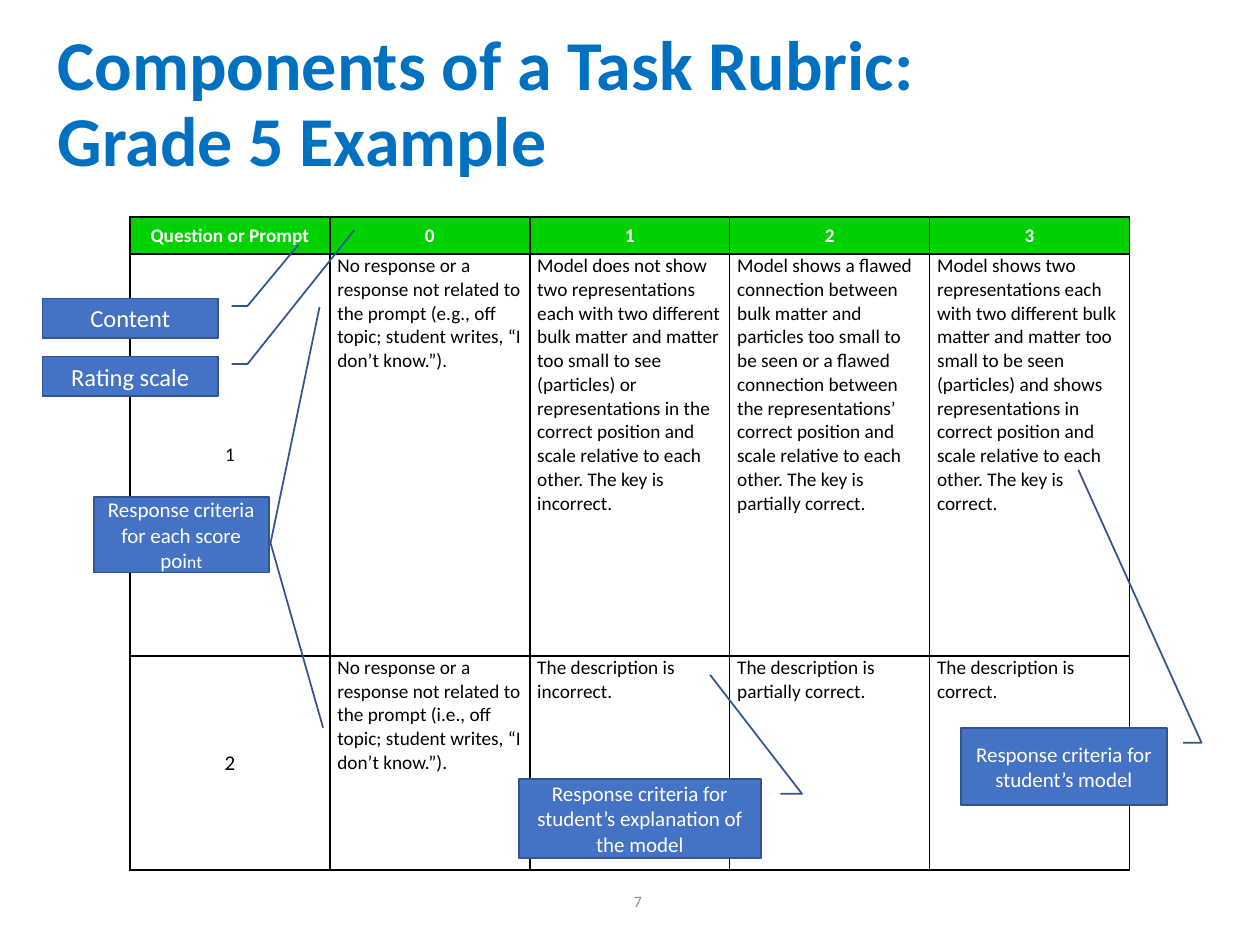
from lxml import etree
from pptx import Presentation
from pptx.dml.color import RGBColor
from pptx.enum.shapes import MSO_SHAPE
from pptx.enum.text import MSO_ANCHOR, MSO_AUTO_SIZE, PP_ALIGN
from pptx.oxml.ns import qn
from pptx.util import Cm, Pt

CALLOUT = MSO_SHAPE.LINE_CALLOUT_2
MIDDLE, TOP = MSO_ANCHOR.MIDDLE, MSO_ANCHOR.TOP
LEFT, CENTER, RIGHT = PP_ALIGN.LEFT, PP_ALIGN.CENTER, PP_ALIGN.RIGHT
NO_FIT = MSO_AUTO_SIZE.NONE
TITLE_ONLY = 5

RUBRIC = [
    ["Question or Prompt", "0", "1", "2", "3"],
    ["1",
     "No response or a response not related to the prompt (e.g., off topic; student writes, “I don’t know.”).",
     "Model does not show two representations each with two different bulk matter and matter too small to see "
     "(particles) or representations in the correct position and scale relative to each other. "
     "The key is incorrect.",
     "Model shows a flawed connection between bulk matter and particles too small to be seen or a flawed "
     "connection between the representations’ correct position and scale relative to each other. "
     "The key is partially correct.",
     "Model shows two representations each with two different bulk matter and matter too small to be seen "
     "(particles) and shows representations in correct position and scale relative to each other. "
     "The key is correct."],
    ["2",
     "No response or a response not related to the prompt (i.e., off topic; student writes, “I don’t know.”).",
     "The description is incorrect.",
     "The description is partially correct.",
     "The description is correct."],
]


def rgb(value):
    return RGBColor.from_string(value)


class RubricSlide:
    font = "Calibri"
    title_color = "0070C0"
    header_fill = "00D200"
    callout_fill = "4472C4"
    callout_line = "325491"

    def __init__(self, prs):
        self.s = prs.slides.add_slide(prs.slide_layouts[TITLE_ONLY])

    def style(self, p, size, color, align, bold=False):
        p.alignment = align
        p.font.name = self.font
        p.font.size = Pt(size)
        p.font.bold = bold
        p.font.color.rgb = rgb(color)

    def title(self, text, x, y, w, h):
        sp = self.s.shapes.title
        sp.left, sp.top, sp.width, sp.height = Cm(x), Cm(y), Cm(w), Cm(h)
        tf = sp.text_frame
        tf.text = text
        tf.auto_size = NO_FIT
        tf.vertical_anchor = MIDDLE
        p = tf.paragraphs[0]
        p.line_spacing = 0.9
        self.style(p, 40, self.title_color, LEFT, True)

    def page_number(self, text, x, y, w, h):
        tf = self.s.shapes.add_textbox(Cm(x), Cm(y), Cm(w), Cm(h)).text_frame
        tf.word_wrap = True
        tf.vertical_anchor = MIDDLE
        tf.text = text
        self.style(tf.paragraphs[0], 9, "8C8C8C", RIGHT)

    def borders(self, cell):
        tc_pr = cell._tc.get_or_add_tcPr()
        for i, side in enumerate(("lnL", "lnR", "lnT", "lnB")):
            ln = etree.Element(qn(f"a:{side}"), w=str(Pt(1)))
            fill = etree.SubElement(ln, qn("a:solidFill"))
            etree.SubElement(fill, qn("a:srgbClr"), val="000000")
            tc_pr.insert(i, ln)

    def table(self, rows, x, y, col_width, heights):
        n = len(rows[0])
        table = self.s.shapes.add_table(
            len(rows), n, Cm(x), Cm(y), Cm(col_width * n), Cm(sum(heights))).table
        table.horz_banding = False
        for col in table.columns:
            col.width = Cm(col_width)
        for i, (row, height) in enumerate(zip(rows, heights)):
            table.rows[i].height = Cm(height)
            for j, text in enumerate(row):
                header, label = i == 0, i == 0 or j == 0
                cell = table.cell(i, j)
                cell.text = text
                cell.margin_left = cell.margin_right = Cm(0.15)
                cell.margin_top = cell.margin_bottom = 0
                cell.vertical_anchor = MIDDLE if label else TOP
                if header:
                    cell.fill.solid()
                    cell.fill.fore_color.rgb = rgb(self.header_fill)
                else:
                    cell.fill.background()
                self.borders(cell)
                self.style(cell.text_frame.paragraphs[0],
                           12 if text == "2" and not header else 11,
                           "FFFFFF" if header else "000000",
                           CENTER if label else LEFT, header)

    def callout(self, text, x, y, w, h, leader, size=12):
        sp = self.s.shapes.add_shape(CALLOUT, Cm(x), Cm(y), Cm(w), Cm(h))
        sp.shadow.inherit = False
        sp.fill.solid()
        sp.fill.fore_color.rgb = rgb(self.callout_fill)
        sp.line.color.rgb = rgb(self.callout_line)
        sp.line.width = Pt(1)
        for i, (px, py) in enumerate(leader):
            sp.adjustments[2 * i] = py
            sp.adjustments[2 * i + 1] = px
        tf = sp.text_frame
        tf.word_wrap = True
        tf.vertical_anchor = MIDDLE
        p = tf.paragraphs[0]
        p.text = text
        self.style(p, size, "FFFFFF", CENTER)
        return p

    def side_callout(self, text, x, y, w, h, tip, size=12):
        self.callout(text, x, y, w, h, [(1.08, 0.19), (1.17, 0.19), tip], size)


def main():
    prs = Presentation()
    prs.slide_width, prs.slide_height = Cm(25.4), Cm(19.05)
    slide = RubricSlide(prs)
    slide.title("Components of a Task Rubric:\vGrade 5 Example", 0.91, 0.94, 22.15, 2.39)
    slide.page_number("7", 7.47, 17.65, 5.72, 1.02)
    slide.table(RUBRIC, 2.62, 4.37, 4.03, [0.75, 8.1, 4.32])
    slide.side_callout("Response criteria for student’s explanation of the model",
                       10.46, 15.7, 4.88, 1.6, (0.79, -1.31))
    slide.side_callout("Rating scale", 0.86, 7.19, 3.53, 0.79, (1.78, -3.23), 14)
    slide.side_callout("Response criteria for student’s model",
                       19.38, 14.68, 4.14, 1.55, (0.57, -3.36))
    p = slide.callout("Response criteria for each score poi", 1.89, 10.02, 3.53, 1.52,
                      [(1.29, -2.52), (1.01, 0.61), (1.31, 3.06)])
    r = p.add_run()
    r.text = "nt"
    r.font.size = Pt(10.1)
    slide.side_callout("Content", 0.86, 6.02, 3.53, 0.79, (1.46, -1.37), 14)
    prs.save("out.pptx")


if __name__ == "__main__":
    main()
